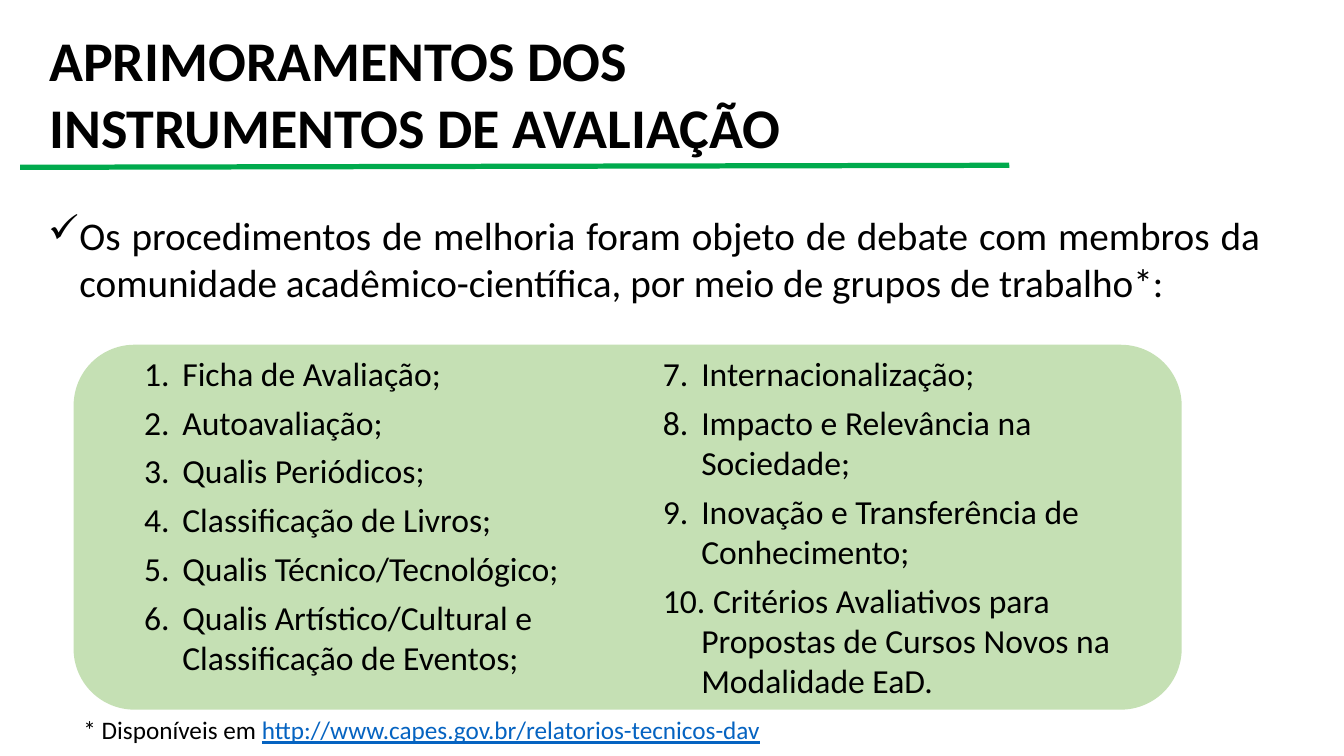
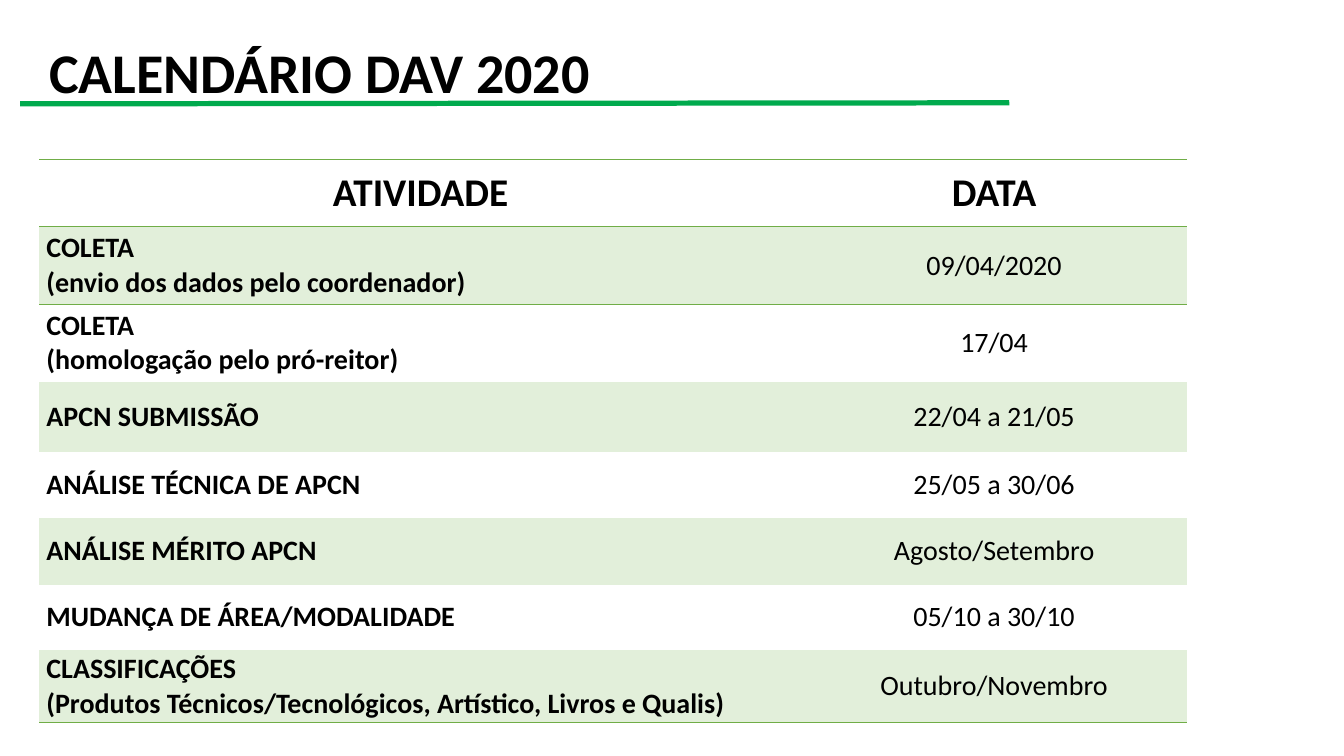
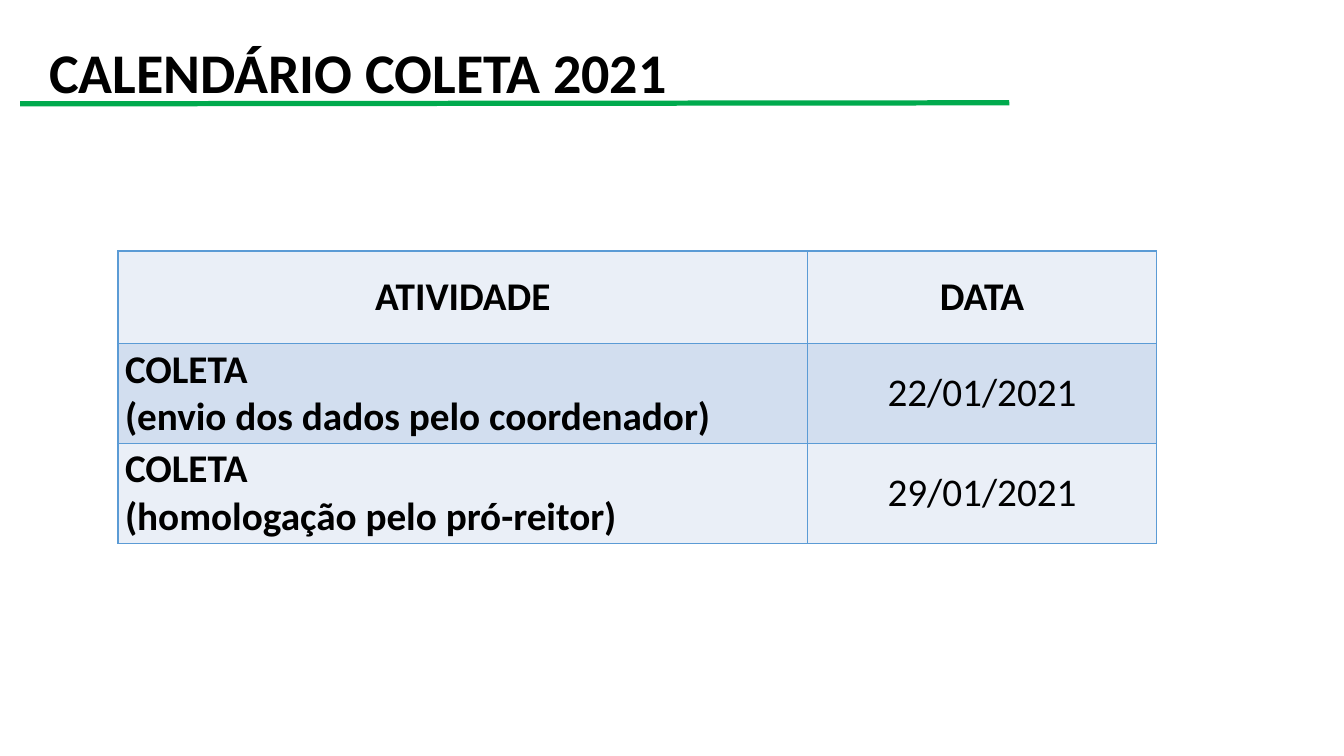
from dataclasses import dataclass
from typing import Any, Optional

from lxml.etree import SubElement
from pptx import Presentation
from pptx.dml.color import RGBColor
from pptx.enum.shapes import MSO_CONNECTOR, MSO_SHAPE
from pptx.enum.text import MSO_ANCHOR, MSO_AUTO_SIZE, PP_ALIGN
from pptx.oxml.ns import qn
from pptx.oxml.xmlchemy import OxmlElement
from pptx.util import Emu, Pt

PX = 9144  # 100 px to the inch
FONT = "Calibri"
BLACK = RGBColor(0x00, 0x00, 0x00)
RULE_GREEN = RGBColor(0x00, 0xAA, 0x4D)
PANEL_GREEN = RGBColor(0xC5, 0xE0, 0xB4)
BORDER_GREEN = RGBColor(0x70, 0xAD, 0x47)
BAND_GREEN = RGBColor(0xE2, 0xEF, 0xDA)
BORDER_BLUE = RGBColor(0x5B, 0x9B, 0xD5)
BAND_LIGHT = RGBColor(0xEA, 0xEF, 0xF7)
BAND_DARK = RGBColor(0xD2, 0xDE, 0xEF)
LINK_BLUE = RGBColor(0x05, 0x63, 0xC1)
PLAIN_STYLE = "{2D5ABB26-0587-4C30-8999-92F81FD0307C}"

GROUP_TOPICS = (
    "Ficha de Avaliação;",
    "Autoavaliação;",
    "Qualis Periódicos;",
    "Classificação de Livros;",
    "Qualis Técnico/Tecnológico;",
    "Qualis Artístico/Cultural e Classificação de Eventos;",
    "Internacionalização;",
    "Impacto e Relevância na Sociedade;",
    "Inovação e Transferência de Conhecimento;",
    " Critérios Avaliativos para Propostas de Cursos Novos na Modalidade EaD.",
)


@dataclass(frozen=True)
class Area:
    left: int
    top: int
    width: int
    height: int

    def emu(self) -> tuple[Emu, ...]:
        return tuple(Emu(n * PX) for n in (self.left, self.top, self.width, self.height))


@dataclass(frozen=True)
class Heading:
    text: str
    area: Area
    rule_from: int
    rule_to: int


@dataclass(frozen=True)
class Calendar:
    area: Area
    columns: tuple[int, ...]
    heights: tuple[int, ...]
    size: int
    bands: tuple[Optional[RGBColor], RGBColor]
    border: RGBColor
    sides: tuple[str, ...]  # bordered sides of each row
    entries: tuple[tuple[str, str], ...]


TITLE_LINE = Area(39, 32, 879, 77)
HEADINGS = (
    Heading("APRIMORAMENTOS DOS INSTRUMENTOS DE AVALIAÇÃO", Area(39, 20, 879, 145), 166, 164),
    Heading("CALENDÁRIO DAV 2020", TITLE_LINE, 103, 102),
    Heading("CALENDÁRIO COLETA 2021", TITLE_LINE, 103, 102),
)
SENDING = "COLETA\n(envio dos dados pelo coordenador)"
APPROVAL = "COLETA\n(homologação pelo pró-reitor)"

CALENDAR_2020 = Calendar(
    Area(39, 158, 1138, 559), (756, 382), (67, 77, 77, 70, 65, 66, 65, 72), 20,
    (None, BAND_GREEN), BORDER_GREEN, ("TB", "T", "", "", "", "", "", "B"),
    (
        (SENDING, "09/04/2020"),
        (APPROVAL, "17/04"),
        ("APCN SUBMISSÃO", "22/04 a 21/05"),
        ("ANÁLISE TÉCNICA DE APCN", "25/05 a 30/06"),
        ("ANÁLISE MÉRITO APCN", "Agosto/Setembro"),
        ("MUDANÇA DE ÁREA/MODALIDADE", "05/10 a 30/10"),
        ("CLASSIFICAÇÕES\n(Produtos Técnicos/Tecnológicos, Artístico, Livros e Qualis)",
         "Outubro/Novembro"),
    ),
)
CALENDAR_2021 = Calendar(
    Area(117, 249, 1030, 291), (684, 346), (92, 99, 99), 28,
    (BAND_LIGHT, BAND_DARK), BORDER_BLUE, ("LRTB",) * 3,
    ((SENDING, "22/01/2021"), (APPROVAL, "29/01/2021")),
)


def apply(target: Any, values: dict[str, Any]) -> None:
    for name, value in values.items():
        setattr(target, name, value)


def add_span(para: Any, text: str, size: int, color: RGBColor = BLACK, **values: Any) -> None:
    span = para.add_run()
    span.text = text
    apply(span.font, {"name": FONT, "size": Pt(size), **values})
    span.font.color.rgb = color


def add_box(page: Any, area: Area, wrap: bool = True) -> Any:
    frame = page.shapes.add_textbox(*area.emu()).text_frame
    apply(frame, {"word_wrap": wrap, "auto_size": MSO_AUTO_SIZE.SHAPE_TO_FIT_TEXT})
    return frame


def add_bullet(para: Any, indent: int, tag: str, **attributes: str) -> None:
    """Give the paragraph a hanging bullet or number."""
    properties = para._p.get_or_add_pPr()
    properties.set("marL", str(indent * PX))
    properties.set("indent", str(-indent * PX))
    bullet = SubElement(properties, qn(tag))
    for name, value in attributes.items():
        bullet.set(name, value)


def add_page(deck: Any, heading: Heading) -> Any:
    """Add a page with its title and green rule."""
    page = deck.slides.add_slide(deck.slide_layouts[6])
    add_span(add_box(page, heading.area).paragraphs[0], heading.text, 40, bold=True)
    ends = (20, heading.rule_from, 1001, heading.rule_to)
    rule = page.shapes.add_connector(MSO_CONNECTOR.STRAIGHT, *(Emu(n * PX) for n in ends))
    rule.line.color.rgb = RULE_GREEN
    rule.line.width = Pt(3.75)
    SubElement(rule._element.spPr, qn("a:effectLst"))
    return page


def add_borders(cell: Any, sides: str, color: RGBColor) -> None:
    properties = cell._tc.get_or_add_tcPr()
    for place, side in enumerate(sides):
        line = OxmlElement(f"a:ln{side}")
        line.set("w", str(Pt(1)))
        fill = SubElement(line, qn("a:solidFill"))
        SubElement(fill, qn("a:srgbClr")).set("val", str(color))
        properties.insert(place, line)


def fill_cell(cell: Any, text: str, size: int, bold: bool, centred: bool) -> None:
    side = Emu(7 * PX)
    apply(cell, {"margin_left": side, "margin_right": side, "margin_top": 0,
                 "margin_bottom": 0, "vertical_anchor": MSO_ANCHOR.MIDDLE})
    frame = cell.text_frame
    for index, line in enumerate(text.split("\n")):
        para = frame.add_paragraph() if index else frame.paragraphs[0]
        para.alignment = PP_ALIGN.CENTER if centred else PP_ALIGN.LEFT
        add_span(para, line, size, bold=bold)
    para.space_after = Pt(6)


def add_calendar(page: Any, calendar: Calendar) -> None:
    rows = (("ATIVIDADE", "DATA"), *calendar.entries)
    table = page.shapes.add_table(len(rows), 2, *calendar.area.emu()).table
    apply(table, {"first_row": False, "horz_banding": False})
    table._tbl.tblPr.find(qn("a:tableStyleId")).text = PLAIN_STYLE
    for column, width in zip(table.columns, calendar.columns):
        column.width = Emu(width * PX)
    for row, height in zip(table.rows, calendar.heights):
        row.height = Emu(height * PX)
    for row_index, texts in enumerate(rows):
        header = row_index == 0
        band = calendar.bands[row_index % 2]
        for column_index, text in enumerate(texts):
            cell = table.cell(row_index, column_index)
            is_date = column_index == 1
            fill_cell(cell, text, 28 if header else calendar.size,
                      bold=header or not is_date, centred=header or is_date)
            if band is None:
                cell.fill.background()
            else:
                cell.fill.solid()
                cell.fill.fore_color.rgb = band
            add_borders(cell, calendar.sides[row_index], calendar.border)


def add_improvements(page: Any) -> None:
    # Green panel
    panel = page.shapes.add_shape(MSO_SHAPE.ROUNDED_RECTANGLE, *Area(73, 342, 1099, 362).emu())
    panel.shadow.inherit = False
    panel.fill.solid()
    panel.fill.fore_color.rgb = PANEL_GREEN
    panel.line.fill.background()

    # Introduction
    para = add_box(page, Area(38, 205, 1222, 104)).paragraphs[0]
    add_bullet(para, 31, "a:buChar", char="✓")
    apply(para, {"alignment": PP_ALIGN.JUSTIFY, "space_after": Pt(12)})
    add_span(para, "Os procedimentos de melhoria foram objeto de debate com membros da "
             "comunidade acadêmico-científica, por meio de grupos de trabalho*:", 28)

    # Numbered topics in two columns
    frame = add_box(page, Area(133, 345, 1049, 358))
    frame._txBody.bodyPr.set("numCol", "2")
    for index, topic in enumerate(GROUP_TOPICS):
        para = frame.add_paragraph() if index else frame.paragraphs[0]
        add_bullet(para, 38, "a:buAutoNum", type="arabicPeriod")
        para.space_after = Pt(6)
        add_span(para, topic, 24)

    # Footnote
    para = add_box(page, Area(73, 704, 693, 40), wrap=False).paragraphs[0]
    add_span(para, "* Disponíveis em ", 18)
    add_span(para, "http://www.capes.gov.br/relatorios-tecnicos-dav", 18, LINK_BLUE,
             underline=True)


def main() -> None:
    deck = Presentation()
    apply(deck, {"slide_width": Emu(1333 * PX), "slide_height": Emu(750 * PX)})
    improvements, calendar_2020, calendar_2021 = (add_page(deck, item) for item in HEADINGS)
    add_improvements(improvements)
    add_calendar(calendar_2020, CALENDAR_2020)
    add_calendar(calendar_2021, CALENDAR_2021)
    deck.save("out.pptx")


if __name__ == "__main__":
    main()
